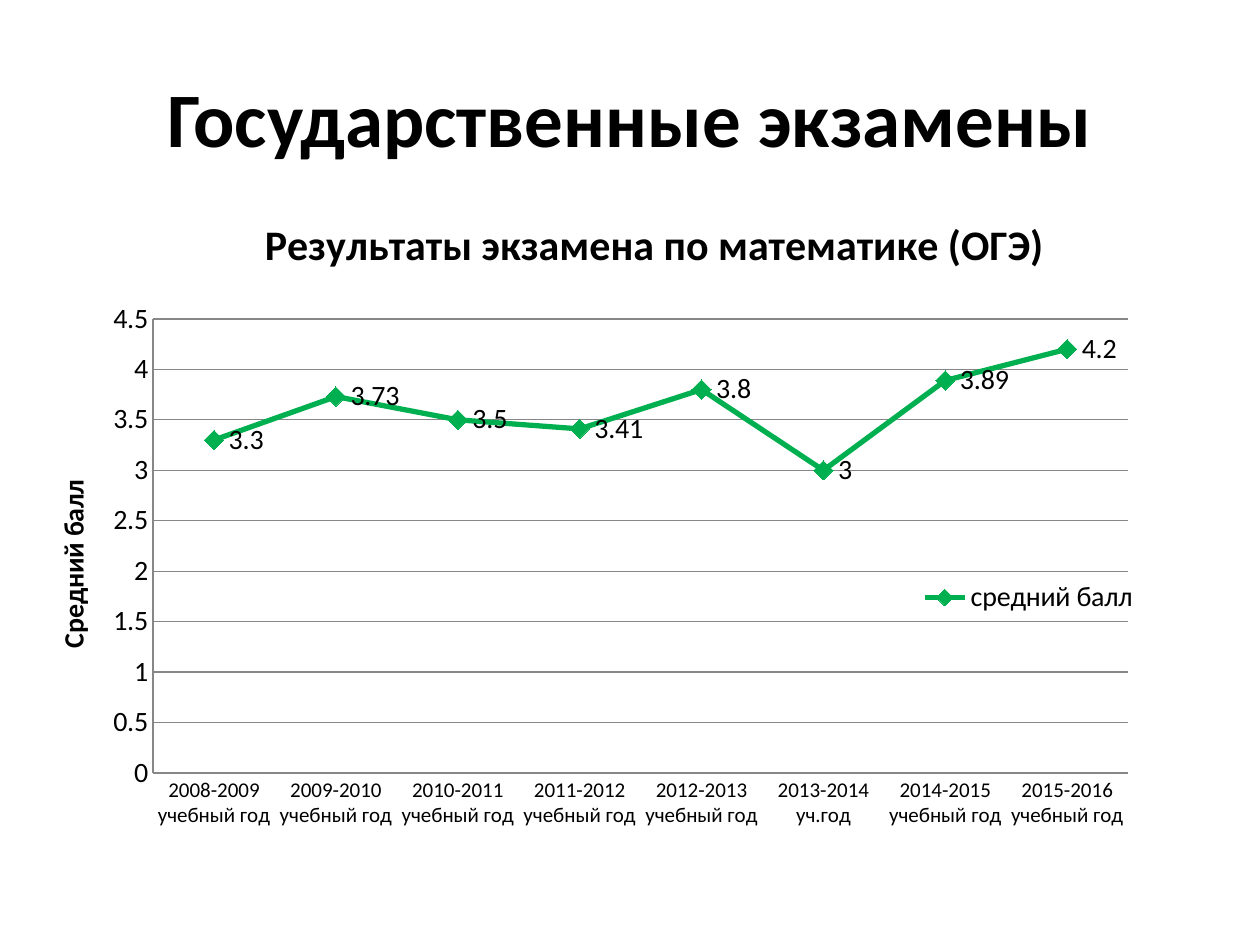
from pptx import Presentation
from pptx.chart.data import CategoryChartData
from pptx.dml.color import RGBColor
from pptx.enum import chart as kinds, text
from pptx.oxml import parse_xml
from pptx.oxml.ns import nsdecls
from pptx.util import Pt

COLORS = {"text": "000000", "series": "00B050", "grid": "878787", "back": "FFFFFF"}
FONT = "Calibri"
SCORES = {
    "2008-2009 учебный год": 3.3,
    "2009-2010 учебный год": 3.73,
    "2010-2011 учебный год": 3.5,
    "2011-2012 учебный год": 3.41,
    "2012-2013 учебный год": 3.8,
    "2013-2014 уч.год": 3,
    "2014-2015 учебный год": 3.89,
    "2015-2016 учебный год": 4.2,
}


def color(name):
    return RGBColor.from_string(COLORS[name])


def format_font(font, size, bold=False):
    font.name, font.size, font.bold = FONT, Pt(size), bold
    font.color.rgb = color("text")


def write_text(frame, words, size, bold=True, align=text.PP_ALIGN.CENTER):
    para = frame.paragraphs[0]
    para.alignment = align
    span = para.add_run()
    span.text = words
    format_font(span.font, size, bold)


def set_layout(chart, parent, before, x, y, w=None, h=None, inner=False):
    """Place a chart part by fractions of the chart's size."""
    element = chart.element.xpath(parent)[0]
    for old in element.xpath("c:layout"):
        element.remove(old)
    target = '<c:layoutTarget val="inner"/>' if inner else ""
    modes = '<c:xMode val="edge"/><c:yMode val="edge"/>'
    sizes = zip("xywh", (x, y, w, h))
    numbers = "".join(f'<c:{key} val="{val}"/>' for key, val in sizes if val is not None)
    layout = parse_xml(f'<c:layout {nsdecls("c")}><c:manualLayout>{target}{modes}'
                       f"{numbers}</c:manualLayout></c:layout>")
    element.xpath(before)[0].addprevious(layout)


def add_title(page, box, words):
    title = page.shapes.title
    title.left, title.top, title.width, title.height = map(Pt, box)
    title.text_frame.vertical_anchor = text.MSO_ANCHOR.MIDDLE
    write_text(title.text_frame, words, 44)


def style_axes(chart):
    for axis, size in ((chart.category_axis, 12), (chart.value_axis, 16)):
        axis.major_tick_mark = kinds.XL_TICK_MARK.NONE
        axis.minor_tick_mark = kinds.XL_TICK_MARK.NONE
        format_font(axis.tick_labels.font, size)
        axis.format.line.color.rgb = color("grid")
        axis.format.line.width = Pt(0.75)
    scale = chart.value_axis
    scale.minimum_scale, scale.maximum_scale, scale.major_unit = 0, 4.5, 0.5
    scale.has_major_gridlines = True
    scale.major_gridlines.format.line.color.rgb = color("grid")
    scale.major_gridlines.format.line.width = Pt(0.75)
    write_text(scale.axis_title.text_frame, "Средний балл", 16)
    body = chart.element.xpath(".//c:valAx/c:title//a:bodyPr")[0]
    body.set("rot", "-5400000")
    body.set("vert", "horz")


def style_series(series):
    series.smooth = False
    series.format.line.color.rgb = color("series")
    series.format.line.width = Pt(3)
    marker = series.marker
    marker.style, marker.size = kinds.XL_MARKER_STYLE.DIAMOND, 11
    marker.format.fill.solid()
    marker.format.fill.fore_color.rgb = color("series")
    marker.format.line.color.rgb = color("series")
    labels = series.data_labels
    labels.show_value = True
    labels.position = kinds.XL_LABEL_POSITION.RIGHT
    format_font(labels.font, 16)


def add_score_chart(page, box):
    data = CategoryChartData()
    data.categories = list(SCORES)
    data.add_series("средний балл", list(SCORES.values()))
    chart = page.shapes.add_chart(kinds.XL_CHART_TYPE.LINE_MARKERS, *map(Pt, box), data).chart
    format_font(chart.font, 16)
    chart.plots[0].vary_by_categories = False
    style_axes(chart)
    style_series(chart.series[0])

    # Heading and legend
    chart.has_title = True
    write_text(chart.chart_title.text_frame, "Результаты экзамена по математике (ОГЭ)", 24)
    chart.has_legend = True
    chart.legend.position = kinds.XL_LEGEND_POSITION.RIGHT
    chart.legend.include_in_layout = False
    format_font(chart.legend.font, 16)

    # Places inside the chart
    set_layout(chart, "c:chart/c:title", "c:overlay", 0.21, 0.02)
    set_layout(chart, ".//c:valAx/c:title", "c:overlay", 0.04, 0.42)
    set_layout(chart, ".//c:legend", "c:overlay", 0.75, 0.57, 0.18, 0.07)
    set_layout(chart, ".//c:plotArea", "c:lineChart", 0.125, 0.186, 0.796, 0.683, inner=True)


def main():
    deck = Presentation()
    deck.slide_width, deck.slide_height = Pt(720), Pt(540)
    page = deck.slides.add_slide(deck.slide_layouts[5])
    page.background.fill.solid()
    page.background.fill.fore_color.rgb = color("back")
    add_title(page, (36, 21.6, 648, 90), "Государственные экзамены")
    add_score_chart(page, (0, 111.6, 700, 380))
    deck.save("out.pptx")


if __name__ == "__main__":
    main()
